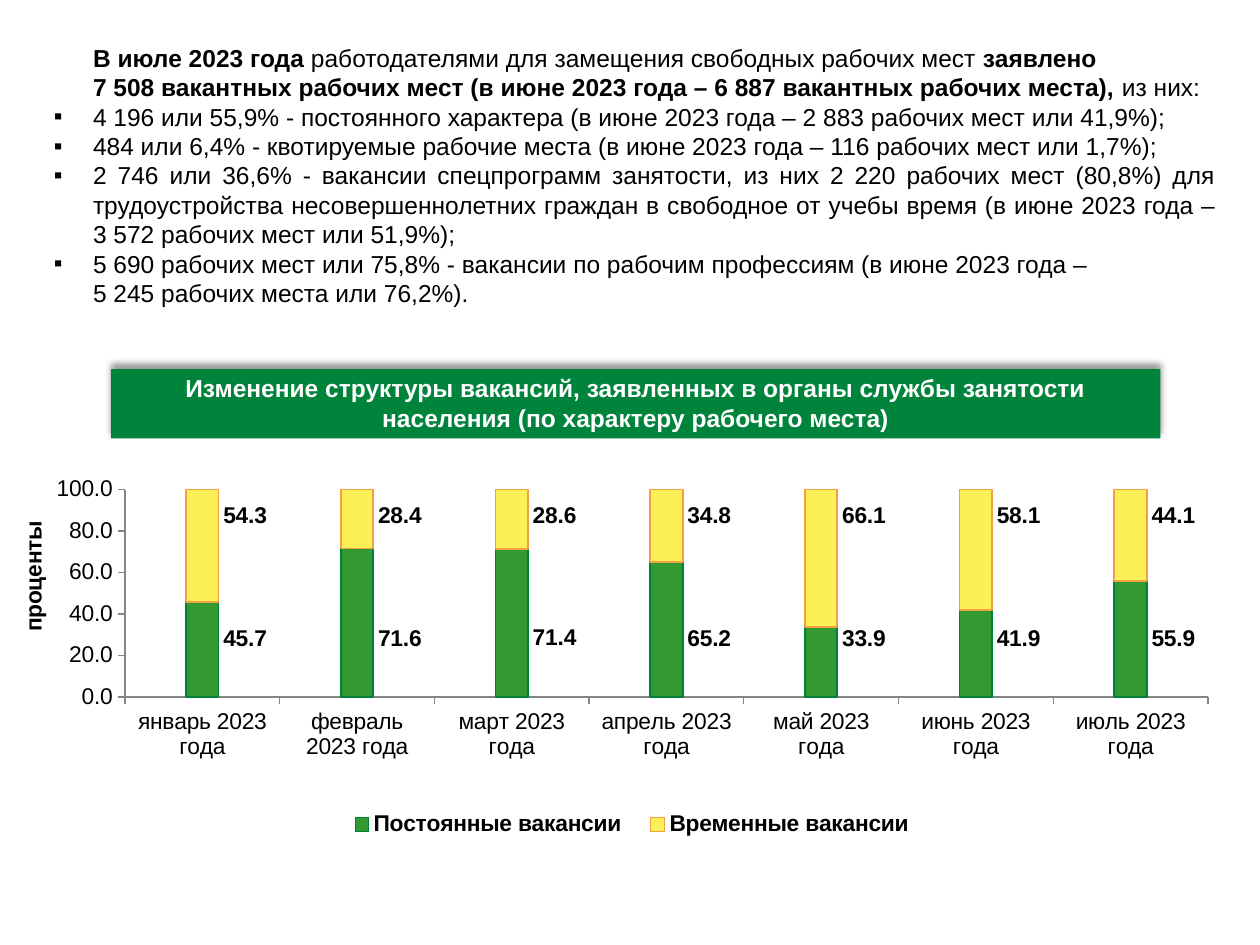
from lxml.etree import SubElement
from pptx import Presentation
from pptx.chart.data import CategoryChartData
from pptx.dml.color import RGBColor
from pptx.enum.chart import XL_CHART_TYPE, XL_LEGEND_POSITION, XL_TICK_MARK
from pptx.enum.shapes import MSO_SHAPE
from pptx.enum.text import MSO_ANCHOR, PP_ALIGN
from pptx.oxml.ns import qn
from pptx.util import Inches, Pt

MONTHS = ["январь", "февраль", "март", "апрель", "май", "июнь", "июль"]
SERIES = [
    {"name": "Постоянные вакансии", "values": [45.7, 71.6, 71.4, 65.2, 33.9, 41.9, 55.9],
     "fill": "339933", "line": "00813B", "base": 0, "label_level": 28},
    {"name": "Временные вакансии", "values": [54.3, 28.4, 28.6, 34.8, 66.1, 58.1, 44.1],
     "fill": "FCF059", "line": "F2A141", "base": 100, "label_level": 87},
]
EDGE = {"xMode": "edge", "yMode": "edge"}
PLOT = {"x": 0.09, "y": 0.155, "w": 0.887, "h": 0.486}
LABEL_SHIFT = 0.035
C15 = "http://schemas.microsoft.com/office/drawing/2012/chart"
INTRO = [
    ("В июле 2023 года ", True),
    ("работодателями для замещения свободных рабочих мест ", False),
    ("заявлено\v7 508 вакантных рабочих мест (в июне 2023 года – 6 887 вакантных рабочих места),", True),
    (" из них:", False),
]
BULLETS = [
    "4 196 или 55,9% - постоянного характера (в июне 2023 года – 2 883 рабочих мест или 41,9%);",
    "484 или 6,4% - квотируемые рабочие места (в июне 2023 года – 116 рабочих мест или 1,7%);",
    "2 746 или 36,6% - вакансии спецпрограмм занятости, из них 2 220 рабочих мест (80,8%) для "
    "трудоустройства несовершеннолетних граждан в свободное от учебы время (в июне 2023 года – "
    "3 572 рабочих мест или 51,9%);",
    "5 690 рабочих мест или 75,8% - вакансии по рабочим профессиям (в июне 2023 года –\v"
    "5 245 рабочих места или 76,2%).",
]
BANNER = ("Изменение структуры вакансий, заявленных в органы службы занятости "
          "населения (по характеру рабочего места)")


def rgb(value):
    return RGBColor.from_string(value)


def set_font(font, size, bold=False, color="000000"):
    for name, value in {"name": "Arial", "size": Pt(size), "bold": bold}.items():
        setattr(font, name, value)
    font.color.rgb = rgb(color)


def add_paragraph(tf, runs, bullet=None):
    p = tf.paragraphs[0] if not tf.paragraphs[0].runs else tf.add_paragraph()
    has_break = any("\v" in text for text, bold in runs)
    p.alignment = PP_ALIGN.LEFT if has_break else PP_ALIGN.JUSTIFY
    pPr = p._p.get_or_add_pPr()
    pPr.set("marL", str(Inches(0.61)))
    pPr.set("indent", str(Inches(-0.31 if bullet else 0)))
    if bullet:
        SubElement(pPr, qn("a:buFont"), typeface="Arial")
        SubElement(pPr, qn("a:buChar"), char=bullet)
    for text, bold in runs:
        for i, line in enumerate(text.split("\v")):
            if i:
                p.add_line_break()
            r = p.add_run()
            r.text = line
            set_font(r.font, 14, bold)


def add_summary(s):
    sp = s.shapes.add_textbox(Inches(0.03), Inches(0.29), Inches(9.72), Inches(2.44))
    tf = sp.text_frame
    tf.word_wrap = True
    add_paragraph(tf, INTRO)
    for text in BULLETS:
        add_paragraph(tf, [(text, False)], "▪")


def add_shadow(sp):
    sp.shadow.inherit = False
    effects = sp._element.spPr.find(qn("a:effectLst"))
    shadow = SubElement(effects, qn("a:outerShdw"), blurRad=str(Pt(4)), dist=str(Pt(3)),
                        dir=str(270 * 60000), rotWithShape="0")
    color = SubElement(shadow, qn("a:srgbClr"), val="000000")
    SubElement(color, qn("a:alpha"), val="40000")


def add_banner(s):
    sp = s.shapes.add_shape(MSO_SHAPE.RECTANGLE, Inches(0.88), Inches(2.93),
                            Inches(8.33), Inches(0.55))
    sp.fill.solid()
    sp.fill.fore_color.rgb = rgb("00843C")
    sp.line.fill.background()
    add_shadow(sp)
    tf = sp.text_frame
    tf.word_wrap = True
    tf.vertical_anchor = MSO_ANCHOR.BOTTOM
    p = tf.paragraphs[0]
    p.alignment = PP_ALIGN.CENTER
    r = p.add_run()
    r.text = BANNER
    set_font(r.font, 14, True, "FFFFFF")


def set_layout(parent, index, values):
    for old in parent.findall(qn("c:layout")):
        parent.remove(old)
    layout = parent.makeelement(qn("c:layout"), {})
    parent.insert(index, layout)
    manual = SubElement(layout, qn("c:manualLayout"))
    for name, value in values.items():
        SubElement(manual, qn("c:" + name), val=str(value))


def hide_leader_lines(dLbls):
    for lines in dLbls.findall(qn("c:showLeaderLines")):
        lines.set("val", "0")
    ext_list = SubElement(dLbls, qn("c:extLst"))
    ext = SubElement(ext_list, qn("c:ext"), uri="{CE6537A1-D6FC-4f65-9D91-7224C49458BB}")
    SubElement(ext, f"{{{C15}}}showLeaderLines", nsmap={"c15": C15}, val="0")


def format_series(series, style):
    series.format.fill.solid()
    series.format.fill.fore_color.rgb = rgb(style["fill"])
    series.format.line.color.rgb = rgb(style["line"])
    series.format.line.width = Pt(1)
    labels = series.data_labels
    labels.show_value = True
    set_font(labels.font, 13, True)
    for i, value in enumerate(style["values"]):
        set_font(series.points[i].data_label.font, 13, True)
        middle = abs(style["base"] - value / 2)
        rise = (middle - style["label_level"]) / 100 * PLOT["h"]
        dLbl = labels._element.findall(qn("c:dLbl"))[i]
        set_layout(dLbl, 1, {"x": LABEL_SHIFT, "y": round(rise, 3)})
    hide_leader_lines(labels._element)


def format_axis(axis):
    axis.has_major_gridlines = False
    axis.major_tick_mark = XL_TICK_MARK.OUTSIDE
    axis.format.line.color.rgb = rgb("868686")
    set_font(axis.tick_labels.font, 13)


def format_value_axis(axis):
    scale = {"minimum_scale": 0, "maximum_scale": 100, "major_unit": 20}
    for name, value in scale.items():
        setattr(axis, name, value)
    axis.tick_labels.number_format = "0.0"
    axis.tick_labels.number_format_is_linked = False
    title = axis.axis_title
    tf = title.text_frame
    tf.text = "проценты"
    tf._txBody.bodyPr.set("rot", "-5400000")
    tf._txBody.bodyPr.set("vert", "horz")
    set_font(tf.paragraphs[0].runs[0].font, 13, True)
    set_layout(title._element, 1, {**EDGE, "x": 0, "y": 0.22})


def format_legend(chart):
    chart.has_legend = True
    legend = chart.legend
    legend.position = XL_LEGEND_POSITION.BOTTOM
    legend.include_in_layout = False
    set_font(legend.font, 13, True)
    set_layout(legend._element, 1, {**EDGE, "x": 0.26, "y": 0.9, "w": 0.49, "h": 0.08})


def add_vacancy_chart(s):
    data = CategoryChartData(number_format="0.0")
    data.categories = [f"{month} 2023 года" for month in MONTHS]
    for style in SERIES:
        data.add_series(style["name"], style["values"])
    chart = s.shapes.add_chart(XL_CHART_TYPE.COLUMN_STACKED, Inches(0.12), Inches(3.36),
                               Inches(9.69), Inches(3.39), data).chart
    set_font(chart.font, 13)
    chart.has_title = False
    format_legend(chart)
    plot = chart.plots[0]
    for name, value in {"gap_width": 376, "overlap": 100, "vary_by_categories": False}.items():
        setattr(plot, name, value)
    for series, style in zip(plot.series, SERIES):
        format_series(series, style)
    for axis in (chart.category_axis, chart.value_axis):
        format_axis(axis)
    format_value_axis(chart.value_axis)
    plot_area = chart._chartSpace.chart.plotArea
    set_layout(plot_area, 0, {"layoutTarget": "inner", **EDGE, **PLOT})


def main():
    prs = Presentation()
    prs.slide_width, prs.slide_height = Inches(10), Inches(7.5)
    s = prs.slides.add_slide(prs.slide_layouts[6])
    add_vacancy_chart(s)
    add_banner(s)
    add_summary(s)
    prs.save("out.pptx")


if __name__ == "__main__":
    main()
